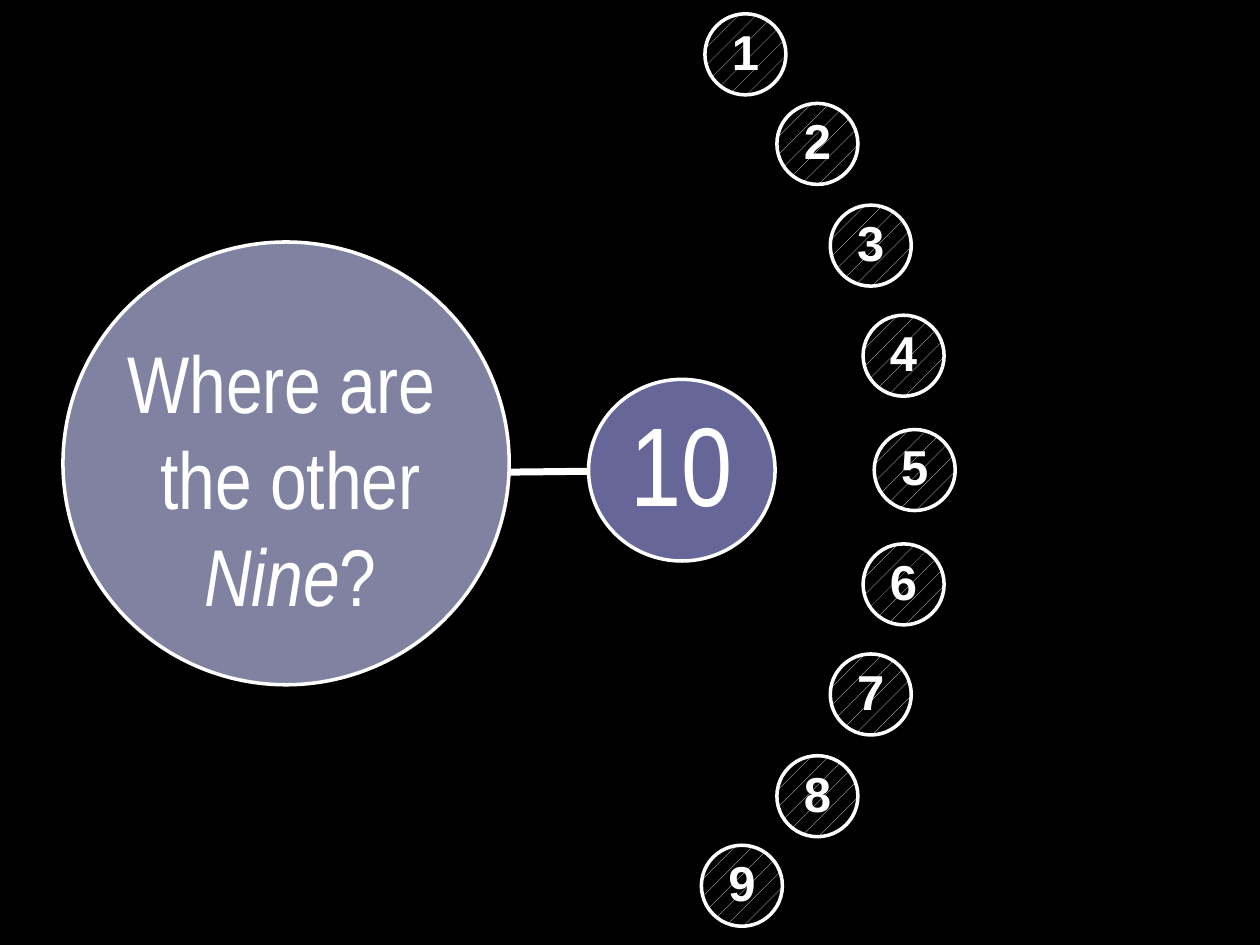
"""Build a slide with one numbered circle beside an arc of nine others."""
from math import cos, radians, sin

from lxml import etree
from pptx import Presentation
from pptx.dml.color import RGBColor
from pptx.enum import dml, shapes, text
from pptx.oxml import ns
from pptx.util import Pt

QUESTION = [[("Where are ", False)], [("the other", False)], [("Nine", True), ("?", False)]]
QUESTION_BOX = (59, 186.5, 214, 174)
QUESTION_CIRCLE = (36, 138.3, 255, 253)
TEN = "10"
TEN_CIRCLE = (336.3, 216.8, 106.6, 103.8)
LINK = (226, 270.5, 336.3, 269.3)
MISSING = ["1", "2", "3", "4", "5", "6", "7", "8", "9"]
NUDGES = {"9": -2}
ARC = {"x": 182.7, "y": 268.6, "radius": 340, "step": 11.08}
DIAMETER = 46.3
COLORS = {
    "background": "000000",
    "white": "FFFFFF",
    "first_hatch": "DADADA",
    "question": "8181A1",
    "ten": "666699",
}


def color(name):
    return RGBColor.from_string(COLORS[name])


def add_circle(slide, box, fill=None, hatch=None):
    shape = slide.shapes.add_shape(shapes.MSO_SHAPE.OVAL, *map(Pt, box))
    shape.shadow.inherit = False
    if hatch:
        shape.fill.patterned()
        shape.fill.pattern = dml.MSO_PATTERN.PERCENT_5
        shape.fill.fore_color.rgb = color(hatch)
        shape.fill.back_color.rgb = color("background")
    else:
        shape.fill.solid()
        shape.fill.fore_color.rgb = color(fill)
    shape.line.color.rgb = color("white")
    shape.line.width = Pt(2)
    return shape


def style(paragraph, font, size, bold=False):
    paragraph.alignment = text.PP_ALIGN.CENTER
    paragraph.font.name = font
    paragraph.font.size = Pt(size)
    paragraph.font.bold = bold
    paragraph.font.color.rgb = color("white")


def add_number(shape, number, font, size, margin, bold=False):
    frame = shape.text_frame
    frame.word_wrap = False
    frame.vertical_anchor = text.MSO_ANCHOR.MIDDLE
    frame.margin_left = frame.margin_right = Pt(margin)
    frame.margin_top = frame.margin_bottom = Pt(margin)
    paragraph = frame.paragraphs[0]
    paragraph.text = number
    paragraph.line_spacing = 0.9
    style(paragraph, font, size, bold)


def add_missing_numbers(slide):
    middle = len(MISSING) // 2
    for index, number in enumerate(MISSING):
        angle = radians((index - middle) * ARC["step"])
        left = ARC["x"] + ARC["radius"] * cos(angle) - DIAMETER / 2 + NUDGES.get(number, 0)
        top = ARC["y"] + ARC["radius"] * sin(angle) - DIAMETER / 2
        hatch = "white" if index else "first_hatch"
        circle = add_circle(slide, (left, top, DIAMETER, DIAMETER), hatch=hatch)
        add_number(circle, number, "Arial", 28, 1.5, bold=True)


def add_link(slide):
    link = slide.shapes.add_connector(shapes.MSO_CONNECTOR.STRAIGHT, *map(Pt, LINK))
    link.line.color.rgb = color("white")
    link.line.width = Pt(4)
    etree.SubElement(link._element.spPr, ns.qn("a:effectLst"))


def add_question(slide):
    frame = slide.shapes.add_textbox(*map(Pt, QUESTION_BOX)).text_frame
    frame.word_wrap = True
    for index, runs in enumerate(QUESTION):
        paragraph = frame.add_paragraph() if index else frame.paragraphs[0]
        style(paragraph, "Arial Narrow", 46)
        for words, italic in runs:
            run = paragraph.add_run()
            run.text = words
            run.font.italic = italic


def main():
    presentation = Presentation()
    presentation.slide_width, presentation.slide_height = Pt(720), Pt(540)
    slide = presentation.slides.add_slide(presentation.slide_layouts[6])
    slide.background.fill.solid()
    slide.background.fill.fore_color.rgb = color("background")
    add_missing_numbers(slide)
    add_link(slide)
    add_circle(slide, QUESTION_CIRCLE, "question")
    add_number(add_circle(slide, TEN_CIRCLE, "ten"), TEN, "Arial Narrow", 64, 3)
    add_question(slide)
    presentation.save("out.pptx")


if __name__ == "__main__":
    main()
